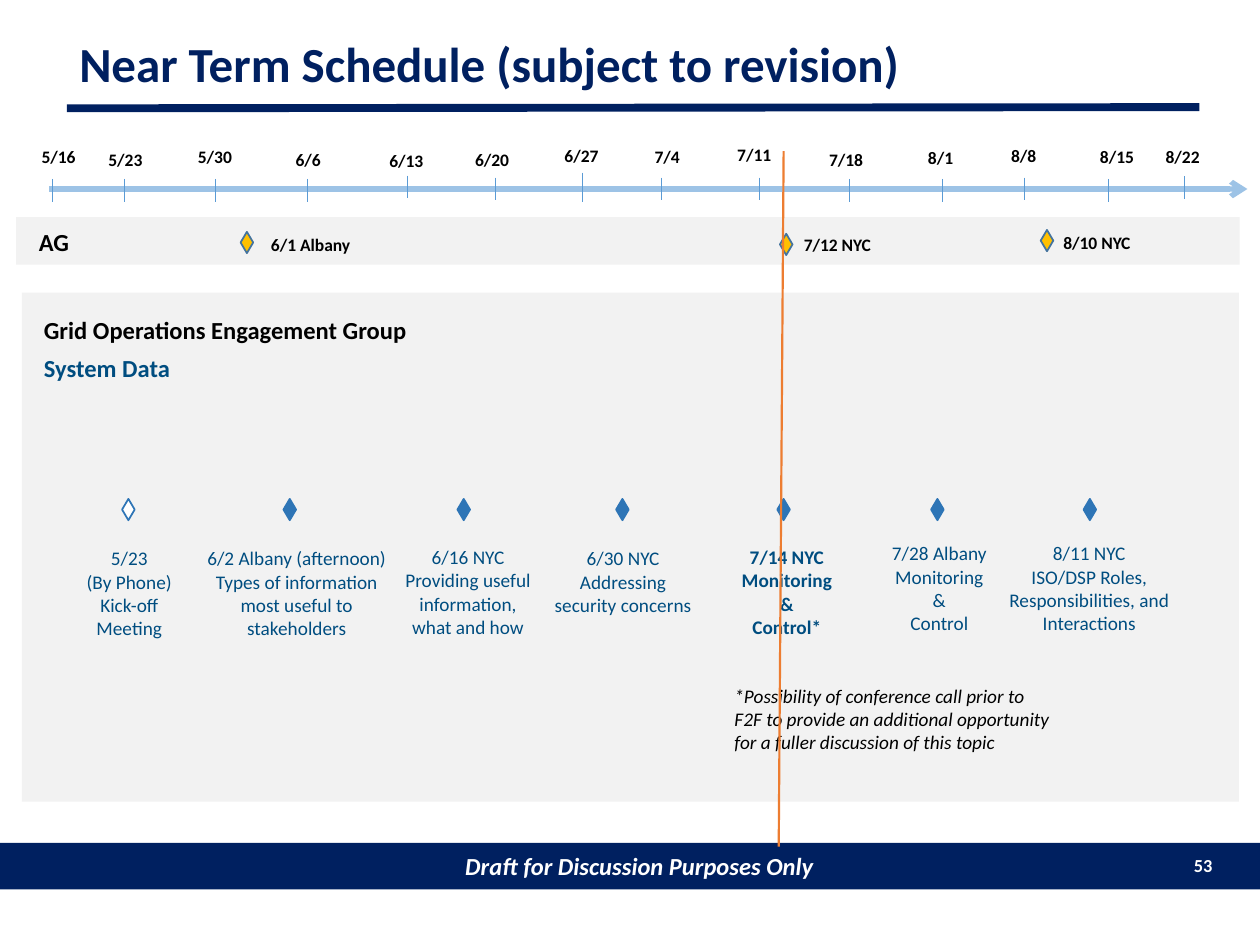
import pptx
import pptx.util
import pptx.dml.color
import pptx.enum.shapes
import pptx.enum.text
import pptx.oxml

Pt = pptx.util.Pt
RGB = pptx.dml.color.RGBColor
SHAPE = pptx.enum.shapes.MSO_SHAPE
ALIGN = pptx.enum.text.PP_ALIGN
ANCHOR = pptx.enum.text.MSO_ANCHOR
NS = 'xmlns:a="http://schemas.openxmlformats.org/drawingml/2006/main"'

NAVY = RGB(0x00, 0x20, 0x60)
TEAL = RGB(0x00, 0x4D, 0x80)
BLACK = RGB(0x00, 0x00, 0x00)
WHITE = RGB(0xFF, 0xFF, 0xFF)
GREY = RGB(0xF2, 0xF2, 0xF2)
AXIS = RGB(0x9D, 0xC3, 0xE6)
TICK = RGB(0x5B, 0x9B, 0xD5)
BLUE = RGB(0x2E, 0x75, 0xB6)
EDGE = RGB(0x43, 0x73, 0x9E)
GOLD = RGB(0xFF, 0xC0, 0x00)
ORANGE = RGB(0xED, 0x7D, 0x31)

prs = pptx.Presentation()
prs.slide_width, prs.slide_height = Pt(720), Pt(540)
s = prs.slides.add_slide(prs.slide_layouts[6])


def add_text(box, lines, size, color, bold=False, italic=False, align=ALIGN.LEFT):
    """Add a text box at box, or write into the shape given as box."""
    sp = s.shapes.add_textbox(*map(Pt, box)) if isinstance(box, tuple) else box
    tf = sp.text_frame
    tf.word_wrap = True
    for i, line in enumerate(lines):
        p = tf.add_paragraph() if i else tf.paragraphs[0]
        p.alignment = align
        r = p.add_run()
        r.text = line
        r.font.name, r.font.size = "Calibri", Pt(size)
        r.font.bold, r.font.italic = bold, italic
        r.font.color.rgb = color
    return tf


def add_mark(kind, box, fill, edge=None):
    """Add a filled shape, outlined only when an edge colour is given."""
    sp = s.shapes.add_shape(kind, *map(Pt, box))
    sp.shadow.inherit = False
    sp.fill.solid()
    sp.fill.fore_color.rgb = fill
    if edge is None:
        sp.line.fill.background()
    else:
        sp.line.color.rgb = edge
        sp.line.width = Pt(1)
    return sp


# Footer band, page number and title
footer = add_mark(SHAPE.RECTANGLE, (0, 481.7, 720, 26.5), NAVY)
tf = add_text(footer, ["Draft for Discussion Purposes Only"], 14, WHITE, True, True, ALIGN.CENTER)
tf.margin_left = Pt(18)
add_text((670.3, 484.6, 29.5, 20.9), ["53"], 10.5, WHITE, True, align=ALIGN.RIGHT)
tf = add_text((38.2, 18, 647.3, 39.6), ["Near Term Schedule (subject to revision)"], 28, NAVY, True)
tf.vertical_anchor = ANCHOR.MIDDLE
tf.paragraphs[0].line_spacing = 0.9

# Grey bands and their headings
add_mark(SHAPE.RECTANGLE, (12.5, 167.3, 695.5, 290.9), GREY)
add_mark(SHAPE.RECTANGLE, (9.2, 124.1, 699.1, 27.2), GREY)
add_text((15.1, 126, 37.4, 24.5), ["AG"], 14, BLACK, True)
add_text((18, 176.4, 254.9, 24.5), ["Grid Operations Engagement Group"], 14, BLACK, True)
add_text((18, 198, 95, 24.5), ["System Data"], 14, TEAL, True)

# Week labels: text, left, top, tick x, tick top
weeks = [
    ("5/16", 15.1, 79.9, 30.2, 102.2), ("5/23", 53.3, 81.4, 71.3, 102.2),
    ("5/30", 104.4, 79.9, 123.1, 102.2), ("6/6", 157.7, 81.4, 175.7, 102.2),
    ("6/13", 213.8, 82.1, 232.6, 100.4), ("6/20", 262.8, 81.4, 283, 101.5),
    ("6/27", 313.9, 79.2, 332.6, 98.6), ("7/4", 362.9, 79.9, 378, 101.5),
    ("7/11", 412.6, 78.5, 434.2, 101.5), ("7/18", 465.1, 81.4, 485.3, 102.2),
    ("8/1", 519.1, 80.6, 538.6, 102.2), ("8/8", 566.6, 79.2, 585.4, 101.5),
    ("8/15", 619.9, 79.9, 633.6, 102.2), ("8/22", 657.4, 79.9, 676.8, 100.8),
]
for label, left, top, _, _ in weeks:
    add_text((left, top, 36.7, 19.4), [label], 10, BLACK, True, align=ALIGN.CENTER)

# Advisory meetings: text, text left and top, diamond left and top
meetings = [
    ("6/1 Albany", 141.8, 130.3, 137.5, 132.5),
    ("7/12 NYC", 442.8, 130.3, 445.7, 133.6),
    ("8/10 NYC", 591.1, 129.2, 594.7, 131.4),
]
for label, left, top, x, y in meetings:
    add_mark(SHAPE.FLOWCHART_DECISION, (x, y, 7.2, 12.2), GOLD, EDGE)
    add_text((left, top, 71.3, 19.4), [label], 10, BLACK, True, align=ALIGN.CENTER)

# System data sessions: diamond left, text left, top and width, lines
sessions = [
    (69.8, 38.2, 308.9, 71.3, ["5/23", "(By Phone)", "Kick-off Meeting"]),
    (162, 104.4, 308.9, 130.3,
     ["6/2 Albany (afternoon)", "Types of information most useful to stakeholders"]),
    (261.4, 202.3, 308.2, 130.3,
     ["6/16 NYC", "Providing useful information,", "what and how"]),
    (352.1, 290.9, 308.9, 130.3, ["6/30 NYC", "Addressing", "security concerns"]),
    (444.2, 384.5, 308.2, 130.3, ["7/14 NYC", "Monitoring", "&", "Control*"]),
    (532.1, 471.6, 306, 130.3, ["7/28 Albany", "Monitoring", "&", "Control"]),
    (619.2, 557.3, 306, 130.3,
     ["8/11 NYC", "ISO/DSP Roles, Responsibilities, and Interactions"]),
]
for x, left, top, width, lines in sessions:
    fill = WHITE if lines[0] == "5/23" else BLUE
    add_mark(SHAPE.FLOWCHART_DECISION, (x, 285.1, 7.2, 12.2), fill, BLUE)
    add_text((left, top, width, 60.5), lines, 11, TEAL,
             bold=lines[0] == "7/14 NYC", align=ALIGN.CENTER)

# Footnote
add_text((412.6, 387.4, 197.3, 47.5),
         ["*Possibility of conference call prior to F2F to provide an additional "
          "opportunity for a fuller discussion of this topic"], 11, BLACK, italic=True)

# Title rule, time axis, ticks and the current-date line
lines = [((38.2, 61.9, 685.4, 61.2), NAVY, 4.5), ((28.1, 108, 712.8, 108), AXIS, 3)]
lines += [((x, y, x, 115.2 if y < 100 else y + 13), TICK, 0.5) for _, _, _, x, y in weeks]
lines.append(((447.8, 86.4, 445, 483.8), ORANGE, 1.25))
for ends, color, width in lines:
    c = s.shapes.add_connector(pptx.enum.shapes.MSO_CONNECTOR.STRAIGHT, *map(Pt, ends))
    c.line.color.rgb = color
    c.line.width = Pt(width)
    if color == AXIS:
        c.line._get_or_add_ln().append(pptx.oxml.parse_xml(f'<a:tailEnd {NS} type="arrow"/>'))
    c._element.spPr.append(pptx.oxml.parse_xml(f"<a:effectLst {NS}/>"))

prs.save("out.pptx")
